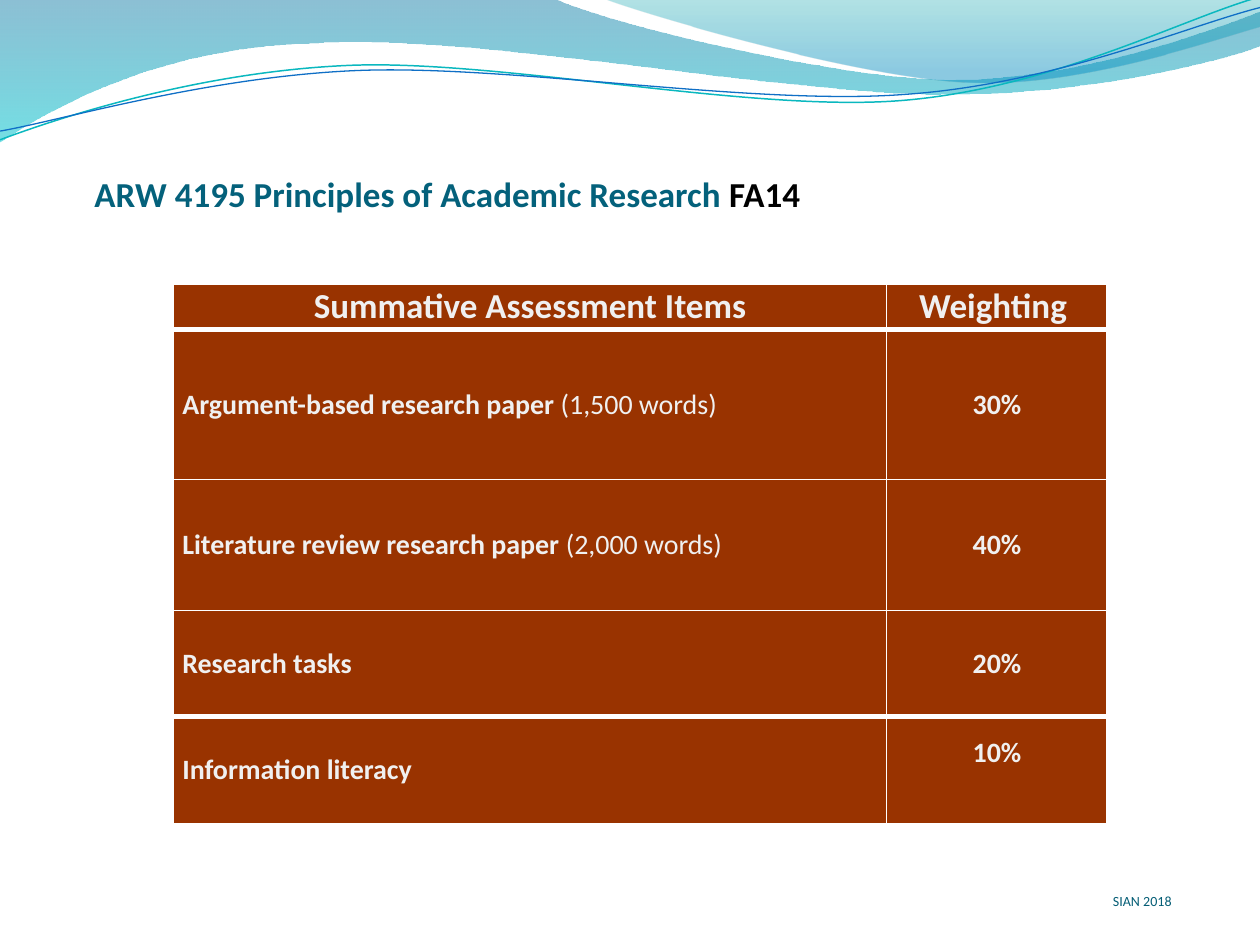
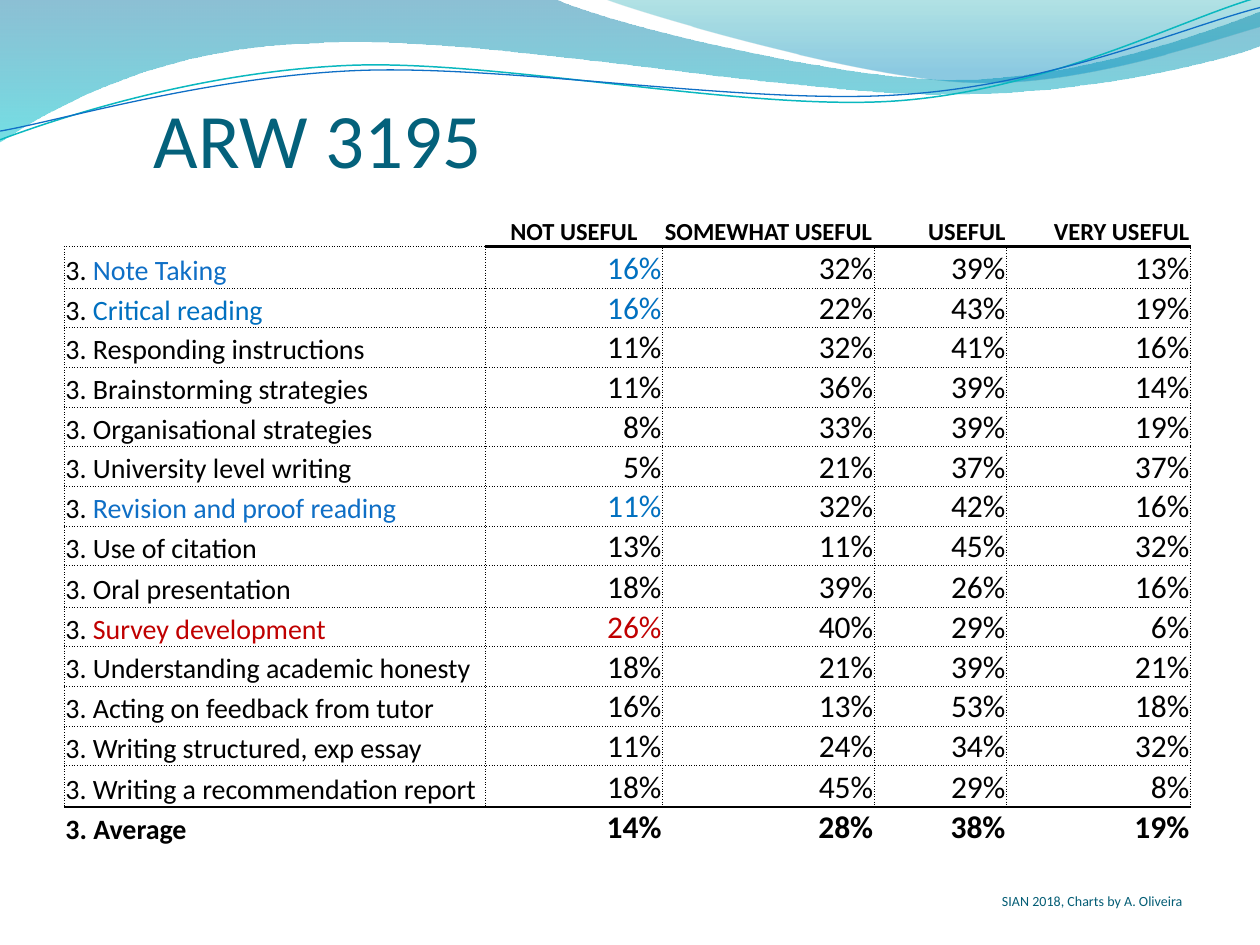
from dataclasses import dataclass
from typing import NamedTuple, Optional

from lxml.etree import SubElement
from pptx import Presentation
from pptx.dml.color import RGBColor
from pptx.enum.text import MSO_ANCHOR, PP_ALIGN
from pptx.oxml.ns import qn
from pptx.util import Pt

FONT = "Calibri"
WHITE = RGBColor(0xFF, 0xFF, 0xFF)
BLACK = RGBColor(0x00, 0x00, 0x00)
PALE = RGBColor(0xF0, 0xF0, 0xF0)
RUST = RGBColor(0x99, 0x33, 0x00)
TITLE_TEAL = RGBColor(0x04, 0x61, 0x7B)
FOOTER_TEAL = RGBColor(0x04, 0x5D, 0x75)
SKY = RGBColor(0x0F, 0x6F, 0xC6)
BLUE = RGBColor(0x00, 0x70, 0xC0)
RED = RGBColor(0xC0, 0x00, 0x00)
AQUA = RGBColor(0x0A, 0xB8, 0xBF)


class Box(NamedTuple):
    left: float
    top: float
    width: float
    height: float


class Run(NamedTuple):
    text: str
    size: float
    color: RGBColor
    bold: bool = False


class Border(NamedTuple):
    color: RGBColor
    width: float
    dash: str = "solid"


class Tint(NamedTuple):
    position: float
    color: RGBColor
    opacity: int


@dataclass(frozen=True)
class Wave:
    """An outline in points; a segment has 2 numbers (line) or 6 (cubic curve)."""
    start: tuple[float, float]
    segments: tuple[tuple[float, ...], ...]
    tints: tuple[Tint, ...] = ()
    line: Optional[Border] = None


@dataclass(frozen=True)
class Assessment:
    name: str
    weight: str
    length: str = ""
    lift: float = 0


@dataclass(frozen=True)
class SurveyItem:
    topic: str
    shares: tuple[int, ...]
    topic_color: RGBColor = BLACK
    first_color: RGBColor = BLACK
    bold: bool = False


WAVES = (
    Wave((0, 0),
         ((316.8, -0.7),
          (342.7, 12.2, 478.1, 45.4, 545.8, 45.4),
          (614.2, 45.4, 689.8, 18.7, 720, 6.5),
          (720.7, 25.9),
          (707.8, 31.7, 626.4, 54.7, 537.1, 54),
          (447.8, 54, 275, 20.2, 185, 24.5),
          (92.9, 25.9, 33.1, 59.8, -0.7, 81.4)),
         tints=(Tint(0, RGBColor(0x00, 0x74, 0xA1), 45),
                Tint(1, RGBColor(0x00, 0xC6, 0xCF), 55))),
    Wave((344.9, -0.7),
         ((366.5, 7.9, 491, 44.6, 553.7, 46.8),
          (616.3, 49.7, 691.9, 23, 720, 15.1),
          (720, 0)),
         tints=(Tint(0, RGBColor(0x00, 0xA1, 0xA9), 30),
                Tint(0.8, RGBColor(0x00, 0x8B, 0xBF), 45))),
    Wave((0, 79.9),
         ((34.6, 67, 113.8, 41, 199.4, 37.4),
          (284.4, 33.8, 427, 64.1, 513.4, 57.6),
          (599.8, 51.1, 675.4, 10.8, 718.6, -1.4)),
         line=Border(AQUA, 0.85)),
    Wave((0, 74.9),
         ((33.8, 69.1, 118.1, 43.9, 203.8, 40.3),
          (290.2, 36.7, 429.8, 60.5, 516.2, 54),
          (602.6, 48.2, 677.5, 15.1, 720, 4.3)),
         line=Border(SKY, 0.75)),
)

ASSESSMENTS = (
    Assessment("Argument-based research paper", "30%", "(1,500 words)"),
    Assessment("Literature review research paper", "40%", "(2,000 words)"),
    Assessment("Research tasks", "20%"),
    Assessment("Information literacy", "10%", lift=19.5),
)

RATINGS = (
    ("NOT USEFUL", PP_ALIGN.CENTER),
    ("SOMEWHAT USEFUL", PP_ALIGN.CENTER),
    ("USEFUL", PP_ALIGN.RIGHT),
    ("VERY USEFUL", PP_ALIGN.RIGHT),
)

SURVEY = (
    SurveyItem("Note Taking", (16, 32, 39, 13), SKY, BLUE),
    SurveyItem("Critical reading", (16, 22, 43, 19), BLUE, BLUE),
    SurveyItem("Responding instructions", (11, 32, 41, 16)),
    SurveyItem("Brainstorming strategies", (11, 36, 39, 14)),
    SurveyItem("Organisational strategies", (8, 33, 39, 19)),
    SurveyItem("University level writing", (5, 21, 37, 37)),
    SurveyItem("Revision and proof reading", (11, 32, 42, 16), SKY, BLUE),
    SurveyItem("Use of citation", (13, 11, 45, 32)),
    SurveyItem("Oral presentation", (18, 39, 26, 16)),
    SurveyItem("Survey development", (26, 40, 29, 6), RED, RED),
    SurveyItem("Understanding academic honesty", (18, 21, 39, 21)),
    SurveyItem("Acting on feedback from tutor", (16, 13, 53, 18)),
    SurveyItem("Writing structured, exp essay", (11, 24, 34, 32)),
    SurveyItem("Writing a recommendation report", (18, 45, 29, 8)),
    SurveyItem("Average", (14, 28, 38, 19), bold=True),
)


def bend_segments(sp, wave: Wave) -> None:
    """Join the three straight steps of each curved segment into one cubic curve."""
    steps = iter(list(sp.element.iter(qn("a:lnTo"))))
    for seg in wave.segments:
        first = next(steps)
        if len(seg) == 2:
            continue
        first.tag = qn("a:cubicBezTo")
        for step in (next(steps), next(steps)):
            first.append(step[0])
            step.getparent().remove(step)


def draw_wave(slide, wave: Wave):
    builder = slide.shapes.build_freeform(*map(Pt, wave.start))
    points = [(Pt(x), Pt(y)) for seg in wave.segments
              for x, y in zip(seg[::2], seg[1::2])]
    builder.add_line_segments(points, close=bool(wave.tints))
    sp = builder.convert_to_shape()
    bend_segments(sp, wave)
    sp.shadow.inherit = False
    if wave.line:
        sp.fill.background()
        sp.line.color.rgb = wave.line.color
        sp.line.width = Pt(wave.line.width)
        return sp
    sp.line.fill.background()
    sp.fill.gradient()
    sp.fill.gradient_angle = 270
    for stop, tint in zip(sp.fill.gradient_stops, wave.tints):
        stop.position = tint.position
        stop.color.rgb = tint.color
    for clr, tint in zip(sp.element.spPr.iter(qn("a:srgbClr")), wave.tints):
        SubElement(clr, qn("a:alpha"), val=str(tint.opacity * 1000))
    return sp


def move_waves_to_layout(slide) -> None:
    """Draw the waves and hand them to the layout, so that every slide shows them."""
    shapes = slide.slide_layout.shapes
    for placeholder in list(slide.slide_layout.placeholders):
        shapes.element.remove(placeholder.element)
    for wave in WAVES:
        shapes.element.append(draw_wave(slide, wave).element)


def write_runs(p, runs: list[Run], align: PP_ALIGN) -> None:
    p.alignment = align
    for text, size, color, bold in runs:
        r = p.add_run()
        r.text = text
        r.font.name = FONT
        r.font.size = Pt(size)
        r.font.bold = bold
        r.font.color.rgb = color


def add_text(slide, box: Box, runs: list[Run], align: PP_ALIGN = PP_ALIGN.LEFT) -> None:
    tf = slide.shapes.add_textbox(*map(Pt, box)).text_frame
    tf.word_wrap = True
    tf.vertical_anchor = MSO_ANCHOR.BOTTOM
    tf.margin_left = tf.margin_right = tf.margin_top = tf.margin_bottom = 0
    write_runs(tf.paragraphs[0], runs, align)


def add_slide(prs, title_box: Box, title: list[Run], footer_box: Box, footer: str):
    slide = prs.slides.add_slide(prs.slide_layouts[6])
    slide.background.fill.solid()
    slide.background.fill.fore_color.rgb = WHITE
    add_text(slide, title_box, title)
    add_text(slide, footer_box, [Run(footer, 8, FOOTER_TEAL)], PP_ALIGN.RIGHT)
    return slide


def add_grid(slide, left: float, top: float, widths: list[float], heights: list[float]):
    """Add a table without banding, sized by its columns and rows."""
    box = Box(left, top, sum(widths), sum(heights))
    table = slide.shapes.add_table(len(heights), len(widths), *map(Pt, box)).table
    table.first_row = table.horz_banding = False
    for column, width in zip(table.columns, widths):
        column.width = Pt(width)
    for row, height in zip(table.rows, heights):
        row.height = Pt(height)
    return table


def style_cell(cell, margins: Box, anchor: MSO_ANCHOR, fill: Optional[RGBColor],
               side: Optional[Border], above: Optional[Border],
               below: Optional[Border]) -> None:
    """Set margins (left, top, right, bottom), borders and fill of a cell."""
    (cell.margin_left, cell.margin_top,
     cell.margin_right, cell.margin_bottom) = map(Pt, margins)
    cell.vertical_anchor = anchor
    tcPr = cell._tc.get_or_add_tcPr()
    for tag, border in (("L", side), ("R", side), ("T", above), ("B", below)):
        ln = SubElement(tcPr, qn(f"a:ln{tag}"))
        if border is None:
            SubElement(ln, qn("a:noFill"))
            continue
        ln.set("w", str(Pt(border.width)))
        solid = SubElement(ln, qn("a:solidFill"))
        SubElement(solid, qn("a:srgbClr"), val=str(border.color))
        SubElement(ln, qn("a:prstDash"), val=border.dash)
    if fill is None:
        cell.fill.background()
    else:
        cell.fill.solid()
        cell.fill.fore_color.rgb = fill


def add_assessment_table(slide) -> None:
    table = add_grid(slide, 99.2, 162.4, [407.5, 126], [25.9, 85.7, 74.9, 60.5, 61.2])
    rows = [([Run("Summative Assessment Items", 20, PALE, True)],
             [Run("Weighting ", 20, PALE, True)])]
    for item in ASSESSMENTS:
        name = [Run(item.name, 16, PALE, True)]
        if item.length:
            name = [Run(f"{item.name} ", 16, PALE, True), Run(item.length, 16, PALE)]
        rows.append((name, [Run(item.weight, 16, PALE, True)]))
    thin, thick = Border(WHITE, 1), Border(WHITE, 3)
    rules = [thin, thick, thin, thin, thick, thin]
    for i, cells in enumerate(rows):
        for j, runs in enumerate(cells):
            lift = ASSESSMENTS[i - 1].lift if i and j else 0
            cell = table.cell(i, j)
            style_cell(cell, Box(5, 0, 5, lift), MSO_ANCHOR.MIDDLE, RUST,
                       thin, rules[i], rules[i + 1])
            align = PP_ALIGN.LEFT if i and not j else PP_ALIGN.CENTER
            write_runs(cell.text_frame.paragraphs[0], runs, align)


def add_survey_table(slide) -> None:
    tall_rows = (0, 1, 9, 14)
    heights = [23.6 if i in tall_rows else 22.7 for i in range(len(SURVEY) + 1)]
    table = add_grid(slide, 36.7, 117.4, [240.5, 101.5, 121, 75.6, 105.1], heights)
    rows = [[([], PP_ALIGN.LEFT)]
            + [([Run(name, 14, BLACK, True)], align) for name, align in RATINGS]]
    for item in SURVEY:
        if item.topic_color == BLACK:
            topic = [Run(f"3. {item.topic}", 16, BLACK, item.bold)]
        else:
            topic = [Run("3. ", 16, BLACK), Run(item.topic, 16, item.topic_color)]
        colors = [item.first_color] + [BLACK] * (len(RATINGS) - 1)
        rows.append([(topic, PP_ALIGN.LEFT)]
                    + [([Run(f"{share}%", 18, color, item.bold)], PP_ALIGN.RIGHT)
                       for share, color in zip(item.shares, colors)])
    dotted = Border(BLACK, 0.5, "sysDot")
    last = len(rows) - 1
    for i, cells in enumerate(rows):
        for j, (runs, align) in enumerate(cells):
            rules = [None, Border(BLACK, 2) if j else dotted,
                     *[dotted] * (last - 2), Border(BLACK, 1), None]
            cell = table.cell(i, j)
            style_cell(cell, Box(0.7, 0.7, 0.7, 0), MSO_ANCHOR.BOTTOM, None,
                       dotted if 0 < i < last else None, rules[i], rules[i + 1])
            write_runs(cell.text_frame.paragraphs[0], runs, align)


def main() -> None:
    prs = Presentation()
    prs.slide_width, prs.slide_height = Pt(720), Pt(540)
    slide = add_slide(
        prs, Box(54, 77, 648, 45.4),
        [Run("ARW 4195 Principles of Academic Research ", 20, TITLE_TEAL, True),
         Run("FA14", 20, BLACK, True)],
        Box(405.4, 490.6, 264.2, 28.8), "SIAN 2018")
    move_waves_to_layout(slide)
    add_assessment_table(slide)
    slide = add_slide(
        prs, Box(87.8, 15.1, 648, 90), [Run("ARW 3195", 44, TITLE_TEAL)],
        Box(411.8, 491, 264.2, 28.8), "SIAN 2018, Charts by A. Oliveira")
    add_survey_table(slide)
    prs.save("out.pptx")


if __name__ == "__main__":
    main()
